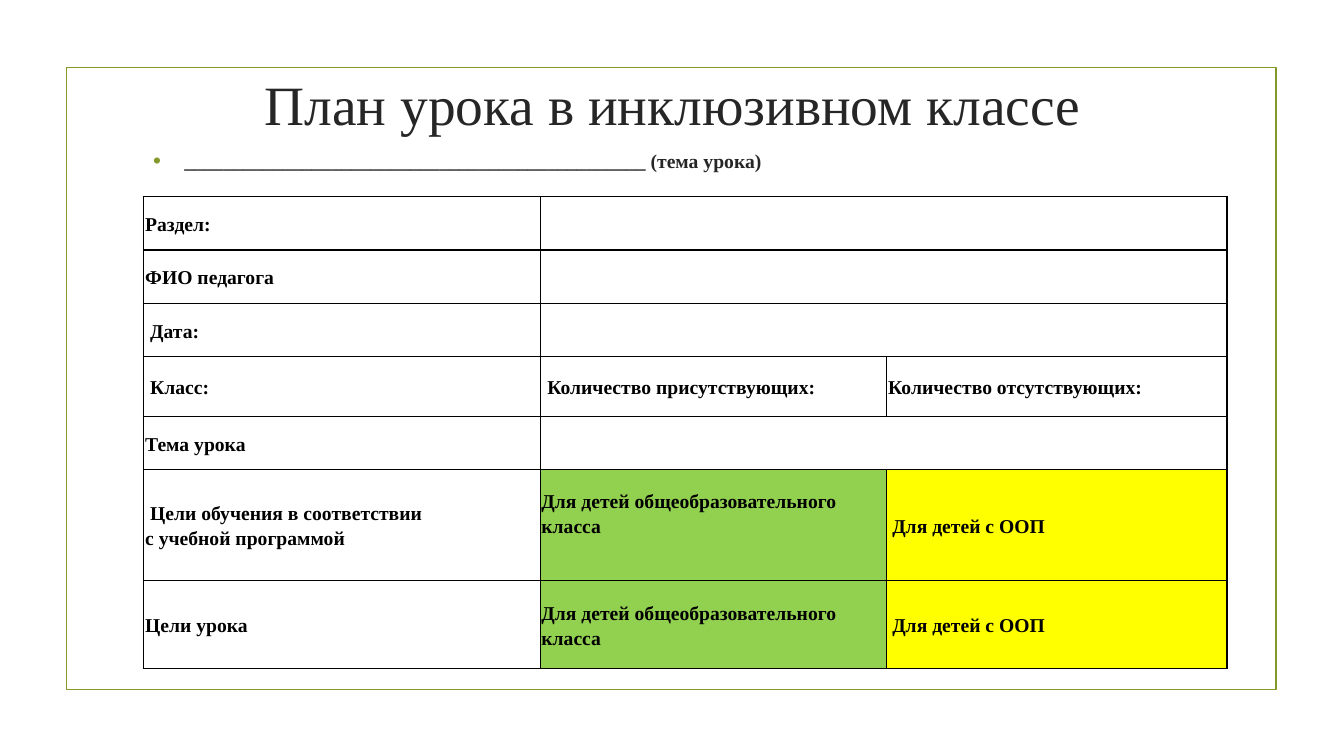
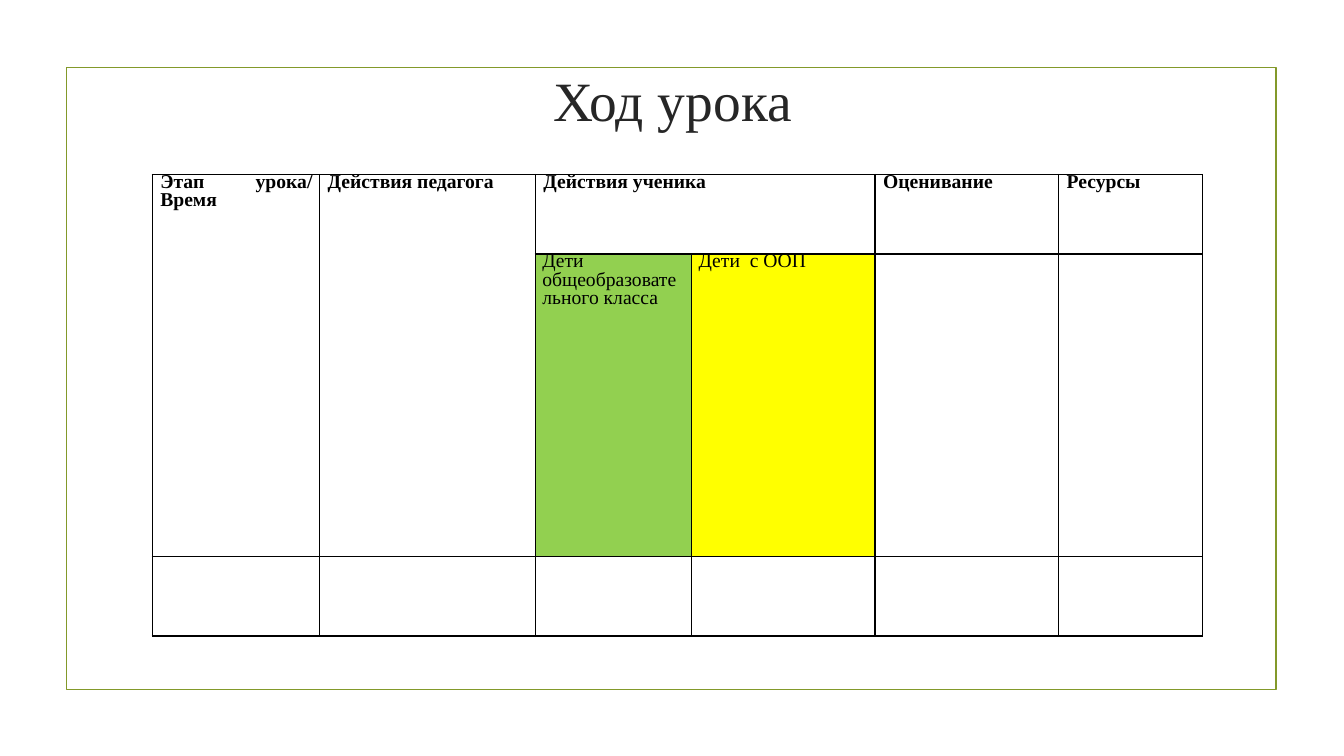
from lxml.etree import SubElement
from pptx import Presentation
from pptx.dml.color import RGBColor
from pptx.enum.shapes import MSO_SHAPE
from pptx.enum.text import MSO_ANCHOR, PP_ALIGN
from pptx.oxml.ns import qn
from pptx.util import Inches, Pt

OLIVE = RGBColor(0x83, 0x99, 0x2A)
DARK = RGBColor(0x26, 0x26, 0x26)
BLACK = RGBColor(0, 0, 0)
WHITE = RGBColor(0xFF, 0xFF, 0xFF)
GREEN = RGBColor(0x92, 0xD0, 0x50)
YELLOW = RGBColor(0xFF, 0xFF, 0x00)
FONT = "Times New Roman"


def write(tf, text, size=14, bold=False, color=BLACK, align=PP_ALIGN.LEFT,
          anchor=MSO_ANCHOR.TOP, spacing=None, after=0):
    tf.word_wrap = True
    tf.vertical_anchor = anchor
    p = tf.paragraphs[0]
    p.text = text
    p.alignment = align
    p.line_spacing = spacing
    p.space_after = Pt(after)
    for r in p.runs:
        r.font.name = FONT
        r.font.size = Pt(size)
        r.font.bold = bold
        r.font.color.rgb = color
    return p


def add_grid(s, left, top, cols, rows, merges):
    table = s.shapes.add_table(len(rows), len(cols), Inches(left), Inches(top),
                               Inches(sum(cols)), Inches(sum(rows))).table
    table.first_row = table.horz_banding = False
    for column, width in zip(table.columns, cols):
        column.width = Inches(width)
    for row, height in zip(table.rows, rows):
        row.height = Inches(height)
    # Black borders go in before the fill
    for cell in table.iter_cells():
        tc_pr = cell._tc.get_or_add_tcPr()
        for side in ("lnL", "lnR", "lnT", "lnB"):
            ln = SubElement(tc_pr, qn(f"a:{side}"), w=str(Pt(1)))
            fill = SubElement(ln, qn("a:solidFill"))
            SubElement(fill, qn("a:srgbClr"), val=str(BLACK))
        cell.fill.solid()
        cell.fill.fore_color.rgb = WHITE
    for first, last in merges:
        table.cell(*first).merge(table.cell(*last))
    return table


prs = Presentation()
prs.slide_width, prs.slide_height = Inches(13.33), Inches(7.5)

# Frame and title of every slide
slides = []
for title, top in (("План урока в инклюзивном классе", 0.62), ("Ход урока", 0.59)):
    s = prs.slides.add_slide(prs.slide_layouts[5])
    frame = s.shapes.add_shape(MSO_SHAPE.RECTANGLE, Inches(0.66), Inches(0.67),
                               Inches(12), Inches(6.17))
    frame.shadow.inherit = False
    frame.fill.background()
    frame.line.color.rgb = OLIVE
    frame.line.width = Pt(1.25)
    sp = s.shapes.title
    sp.left, sp.top = Inches(1.42), Inches(top)
    sp.width, sp.height = Inches(10.5), Inches(0.8)
    write(sp.text_frame, title, size=39.6, color=DARK, align=PP_ALIGN.CENTER,
          anchor=MSO_ANCHOR.MIDDLE)
    slides.append(s)
plan, course = slides

# Slide 1: lesson topic line
topic = plan.shapes.add_textbox(Inches(1.42), Inches(1.43), Inches(10.5), Inches(0.45))
p = write(topic.text_frame, "_" * 47 + " (тема урока)", bold=True, color=DARK, after=6)
p_pr = p._p.get_or_add_pPr()
p_pr.set("marL", str(Inches(0.31)))
p_pr.set("indent", str(-Inches(0.31)))
bullet_color = SubElement(p_pr, qn("a:buClr"))
SubElement(bullet_color, qn("a:srgbClr"), val=str(OLIVE))
SubElement(p_pr, qn("a:buSzPct"), val="115000")
SubElement(p_pr, qn("a:buFont"), typeface="Arial")
SubElement(p_pr, qn("a:buChar"), char="•")

# Slide 1: plan table
CLASS_GOALS = "Для детей общеобразовательного класса"
SPECIAL_GOALS = "Для детей с ООП"
plan_rows = [
    ["Раздел:"],
    ["ФИО педагога"],
    [" Дата:"],
    [" Класс:", " Количество присутствующих:", "Количество отсутствующих:"],
    ["Тема урока"],
    [" Цели обучения в соответствии\vс учебной программой", CLASS_GOALS, SPECIAL_GOALS],
    ["Цели урока", CLASS_GOALS, SPECIAL_GOALS],
]
table = add_grid(plan, 1.42, 1.95, [3.94, 3.43, 3.38],
                 [0.53, 0.53, 0.53, 0.59, 0.53, 1.1, 0.87],
                 [((i, 1), (i, 2)) for i, row in enumerate(plan_rows) if len(row) == 1])
goal_styles = {CLASS_GOALS: (GREEN, 0.01), SPECIAL_GOALS: (YELLOW, 0.06)}
for i, row in enumerate(plan_rows):
    for j, text in enumerate(row):
        cell = table.cell(i, j)
        color, inset = goal_styles.get(text, (WHITE, 0.02))
        cell.fill.fore_color.rgb = color
        cell.margin_left = cell.margin_right = Inches(inset)
        cell.margin_top = cell.margin_bottom = Inches(0.01)
        cell.vertical_anchor = MSO_ANCHOR.MIDDLE
        write(cell.text_frame, text, bold=True, anchor=None, spacing=1.15, after=1)
# The first class goal sits above the middle of its row
table.cell(5, 1).margin_bottom = Inches(0.26)

# Slide 2: lesson stages table
table = add_grid(course, 1.51, 1.73, [1.66, 2.14, 1.55, 1.82, 1.82, 1.43],
                 [0.79, 3, 0.79],
                 [((0, 0), (1, 0)), ((0, 1), (1, 1)), ((0, 2), (0, 3))])
stage_cells = [
    (0, 0, "Этап урока/ Время", WHITE),
    (0, 1, "Действия педагога", WHITE),
    (0, 2, "Действия ученика", WHITE),
    (0, 4, "Оценивание", WHITE),
    (0, 5, "Ресурсы", WHITE),
    (1, 2, "Дети общеобразовательного класса", GREEN),
    (1, 3, "Дети  с ООП", YELLOW),
]
for i, j, text, color in stage_cells:
    cell = table.cell(i, j)
    cell.fill.fore_color.rgb = color
    cell.margin_left = Inches(0.08 if i == 0 else 0.07)
    cell.margin_right = Inches(0.07)
    cell.margin_top = cell.margin_bottom = 0
    write(cell.text_frame, text, bold=i == 0, align=PP_ALIGN.JUSTIFY, anchor=None,
          spacing=Pt(13), after=1)

prs.save("out.pptx")
